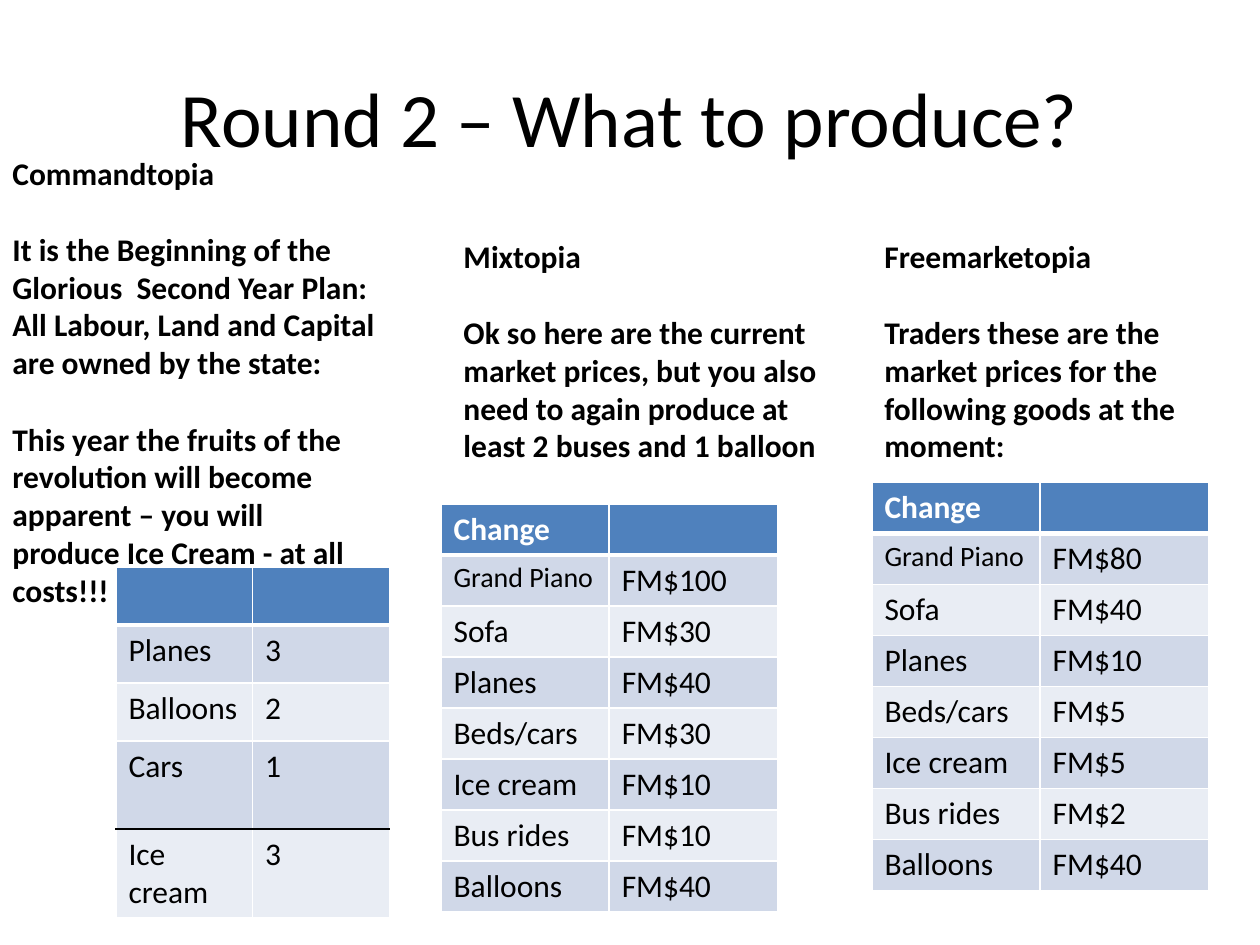
from dataclasses import dataclass

from lxml import etree
from pptx import Presentation
from pptx.dml.color import RGBColor
from pptx.enum.text import MSO_ANCHOR, PP_ALIGN
from pptx.oxml.ns import qn
from pptx.util import Inches, Pt

TITLE_LAYOUT = 5
CENTER = PP_ALIGN.CENTER
MIDDLE = MSO_ANCHOR.MIDDLE
FONT = "Calibri"
BLACK, WHITE = "000000", "FFFFFF"
HEADER_FILL = "4F81BD"
BAND_FILLS = ("D0D8E8", "E9EDF4")
BODY_SIZE = 18
LINE_HEIGHT = 22
PRICE_ROWS = [3.24 / 8] * 8
GOODS = ("Grand Piano", "Sofa", "Planes", "Beds/cars",
         "Ice cream", "Bus rides", "Balloons")


@dataclass
class Briefing:
    left: float
    top: float
    height: float
    paragraphs: tuple[str, ...]


@dataclass
class GoodsTable:
    left: float
    top: float
    width: float
    row_heights: list[float]
    heading: str
    rows: list[tuple[str, str]]
    ruled_row: int | None = None  # row with a black line above it


def price_rows(*prices: int) -> list[tuple[str, str]]:
    return [(good, f"FM${price}") for good, price in zip(GOODS, prices)]


BRIEFINGS = [
    Briefing(0, 1.17, 4.64, (
        "Commandtopia",
        "It is the Beginning of the Glorious  Second Year Plan: "
        "All Labour, Land and Capital are owned by the state:",
        "This year the fruits of the revolution will become apparent – "
        "you will produce Ice Cream - at all costs!!!")),
    Briefing(3.58, 1.83, 3.13, (
        "Mixtopia",
        "Ok so here are the current market prices, but you also need to "
        "again produce at least 2 buses and 1 balloon")),
    Briefing(6.92, 1.83, 2.83, (
        "Freemarketopia",
        "Traders these are the market prices for the following goods "
        "at the moment:")),
]

TABLES = [
    GoodsTable(0.92, 4.5, 2.17, [0.46] * 3 + [0.7] * 2, "",
               [("Planes", "3"), ("Balloons", "2"), ("Cars", "1"),
                ("Ice cream", "3")], ruled_row=4),
    GoodsTable(6.92, 3.83, 2.67, PRICE_ROWS, "Change",
               price_rows(80, 40, 10, 5, 5, 2, 40)),
    GoodsTable(3.5, 4, 2.67, PRICE_ROWS, "Change",
               price_rows(100, 30, 40, 30, 10, 10, 40)),
]


def rgb(color: str) -> RGBColor:
    return RGBColor.from_string(color)


def style_font(paragraph, size: int, color: str = BLACK, bold: bool = False) -> None:
    font = paragraph.font
    font.name, font.size, font.bold = FONT, Pt(size), bold
    font.color.rgb = rgb(color)


def set_border(cell, side: str, color: str, width: float) -> None:
    """Draw one cell edge; side is L, R, T or B, in that order, before the fill."""
    properties = cell._tc.get_or_add_tcPr()
    line = etree.SubElement(properties, qn(f"a:ln{side}"), w=str(Pt(width)))
    fill = etree.SubElement(line, qn("a:solidFill"))
    etree.SubElement(fill, qn("a:srgbClr"), val=color)


def add_title(slide, text: str) -> None:
    title = slide.shapes.title
    title.left, title.top = Inches(0.5), Inches(0.3)
    title.width, title.height = Inches(9), Inches(1.25)
    title.text_frame.text = text
    title.text_frame.vertical_anchor = MIDDLE
    heading = title.text_frame.paragraphs[0]
    heading.alignment = CENTER
    style_font(heading, 44)


def add_briefing(slide, briefing: Briefing) -> None:
    box = slide.shapes.add_textbox(Inches(briefing.left), Inches(briefing.top),
                                   Inches(3.08), Inches(briefing.height))
    frame = box.text_frame
    frame.word_wrap = True
    frame.text = "\n".join(briefing.paragraphs)
    for index, paragraph in enumerate(frame.paragraphs):
        style_font(paragraph, BODY_SIZE, bold=True)
        if index:
            paragraph.space_before = Pt(LINE_HEIGHT)


def add_goods_table(slide, goods: GoodsTable) -> None:
    contents = [(goods.heading, ""), *goods.rows]
    table = slide.shapes.add_table(
        len(contents), 2, Inches(goods.left), Inches(goods.top),
        Inches(goods.width), Inches(sum(goods.row_heights))).table
    for row, height in zip(table.rows, goods.row_heights):
        row.height = Inches(height)

    for r, texts in enumerate(contents):
        is_header = r == 0
        top_color = BLACK if r == goods.ruled_row else WHITE
        bottom_color = BLACK if r + 1 == goods.ruled_row else WHITE
        for c, text in enumerate(texts):
            cell = table.cell(r, c)
            set_border(cell, "L", WHITE, 1)
            set_border(cell, "R", WHITE, 1)
            set_border(cell, "T", top_color, 3 if r == 1 else 1)
            set_border(cell, "B", bottom_color, 3 if is_header else 1)
            cell.fill.solid()
            cell.fill.fore_color.rgb = rgb(
                HEADER_FILL if is_header else BAND_FILLS[(r - 1) % 2])
            cell.text = text
            style_font(cell.text_frame.paragraphs[0],
                       16 if text == "Grand Piano" else BODY_SIZE,
                       WHITE if is_header else BLACK, is_header)


def main() -> None:
    presentation = Presentation()
    presentation.slide_width, presentation.slide_height = Inches(10), Inches(7.5)
    slide = presentation.slides.add_slide(presentation.slide_layouts[TITLE_LAYOUT])
    add_title(slide, "Round 2 – What to produce?")
    for briefing in BRIEFINGS:
        add_briefing(slide, briefing)
    for goods in TABLES:
        add_goods_table(slide, goods)
    presentation.save("out.pptx")


if __name__ == "__main__":
    main()
